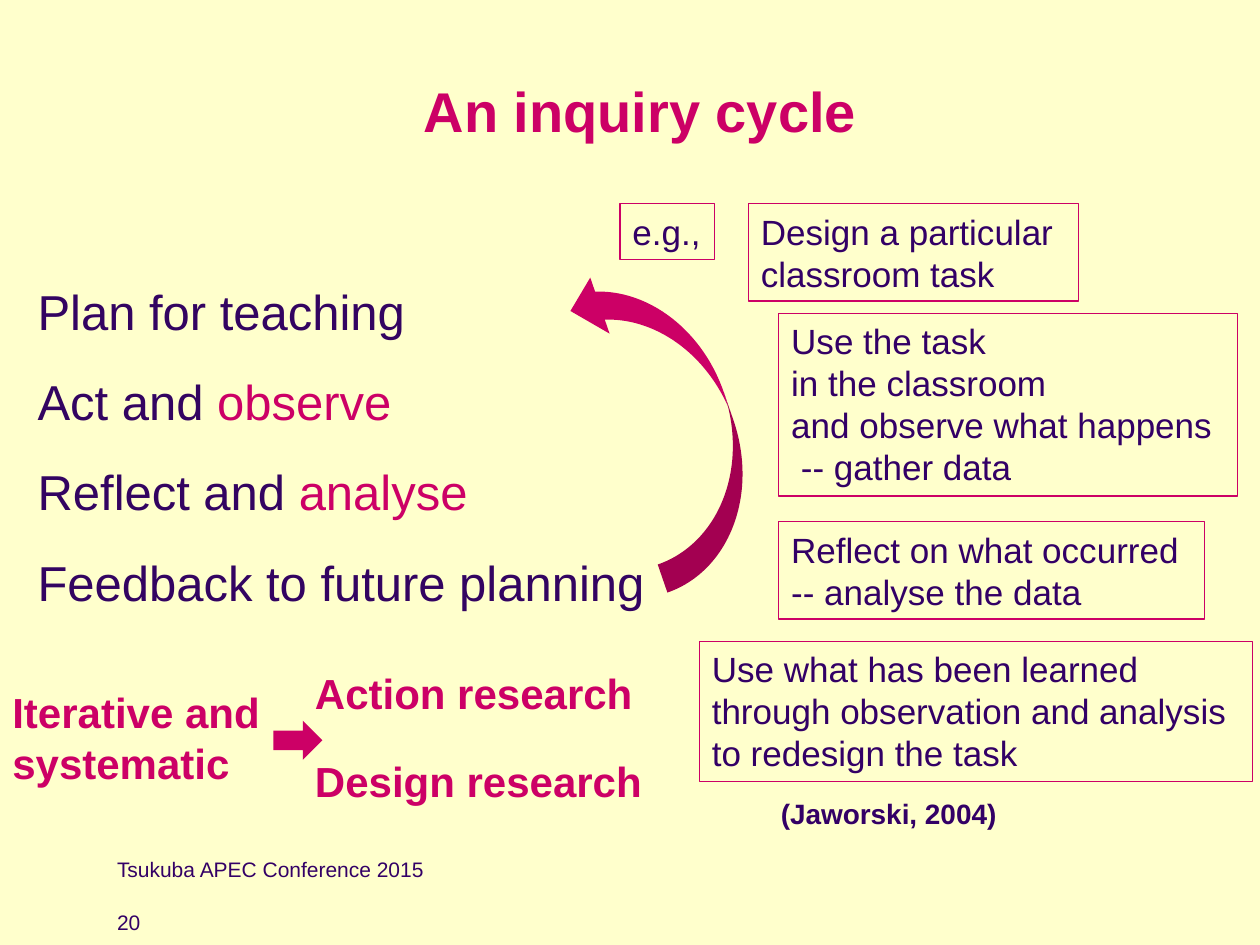
"""Build the slide 'An inquiry cycle'."""
from pptx import Presentation
from pptx.dml.color import RGBColor
from pptx.enum.shapes import MSO_SHAPE
from pptx.enum.text import MSO_ANCHOR, MSO_AUTO_SIZE, PP_ALIGN
from pptx.util import Cm, Pt

TOP, MIDDLE = MSO_ANCHOR.TOP, MSO_ANCHOR.MIDDLE
LEFT, CENTER = PP_ALIGN.LEFT, PP_ALIGN.CENTER
GROW, FIXED = MSO_AUTO_SIZE.SHAPE_TO_FIT_TEXT, MSO_AUTO_SIZE.NONE
RECTANGLE = MSO_SHAPE.RECTANGLE

FONT = "Arial"
COLORS = {"paper": "FFFFCC", "accent": "CC0066", "step": "330461", "ink": "330066"}

TITLE = ("An inquiry cycle", (2.11, 0.84, 21.59, 2.74))
STEPS = [
    ("Plan for teaching", ""),
    ("Act and ", "observe"),
    ("Reflect and ", "analyse"),
    ("Feedback to future planning", ""),
]
STEPS_AREA = (0.51, 4.24, 13.41, 9.5)
EXAMPLES = [
    ("e.g.,", (12.5, 4.11, 1.9, 1.12)),
    ("Design a particular\nclassroom task", (15.09, 4.11, 6.65, 1.96)),
    ("Use the task \vin the classroom\vand observe what happens \v -- gather data",
     (15.7, 6.32, 9.25, 3.68)),
    ("Reflect on what occurred \v-- analyse the data", (15.7, 10.52, 8.59, 1.96)),
    ("Use what has been learned \vthrough observation and analysis \vto redesign the task",
     (14.1, 12.93, 11.15, 2.82)),
]
APPROACHES = [
    ("Action research", (6.1, 13.34, 6.99, 1.27)),
    ("Design research", (6.1, 15.11, 7.16, 1.27)),
    ("Iterative and\nsystematic", (0, 13.72, 5.79, 2.31)),
]
CITATION = ("(Jaworski, 2004)", (15.49, 15.93, 4.93, 0.94))
FOOTERS = [
    ("Tsukuba APEC Conference 2015", (2.11, 17.15, 15.88, 1.07)),
    ("20", (2.11, 18.21, 1.7, 0.53)),
]
ARROWS = [
    (MSO_SHAPE.CURVED_UP_ARROW, (10.21, 7.24, 6.6, 2.39), 251),
    (MSO_SHAPE.RIGHT_ARROW, (5.51, 14.53, 0.99, 0.79), 0),
]


def rgb(name):
    return RGBColor.from_string(COLORS[name])


def lengths(area):
    return [Cm(value) for value in area]


def style(paragraph, size, color, bold=False):
    font = paragraph.font
    font.name, font.size, font.bold = FONT, Pt(size), bold
    font.color.rgb = rgb(color)


def write(holder, text, size, color, bold=False, align=LEFT, anchor=TOP, grow=False):
    frame = holder.text_frame
    frame.text = text
    frame.word_wrap = not grow
    frame.auto_size = GROW if grow else FIXED
    frame.vertical_anchor = anchor
    for paragraph in frame.paragraphs:
        paragraph.alignment = align
        style(paragraph, size, color, bold)


def add_label(slide, text, area, *look, **options):
    write(slide.shapes.add_textbox(*lengths(area)), text, *look, **options)


def add_example(slide, text, area):
    box = slide.shapes.add_shape(RECTANGLE, *lengths(area))
    box.shadow.inherit = False
    box.fill.background()
    box.line.color.rgb = rgb("accent")
    box.line.width = Pt(0.75)
    write(box, text, 20, "ink", grow=True)


def add_arrow(slide, kind, area, rotation):
    arrow = slide.shapes.add_shape(kind, *lengths(area))
    arrow.rotation = rotation
    arrow.shadow.inherit = False
    arrow.fill.solid()
    arrow.fill.fore_color.rgb = rgb("accent")
    arrow.line.fill.background()


def add_steps(slide):
    frame = slide.shapes.add_textbox(*lengths(STEPS_AREA)).text_frame
    frame.word_wrap = True
    frame.vertical_anchor = MIDDLE
    for index, (action, focus) in enumerate(STEPS):
        paragraph = frame.add_paragraph() if index else frame.paragraphs[0]
        paragraph.space_before = Pt(18 if index else 0)
        style(paragraph, 28, "step")
        paragraph.add_run().text = action
        if focus:
            highlight = paragraph.add_run()
            highlight.text = focus
            highlight.font.color.rgb = rgb("accent")


def main():
    deck = Presentation()
    deck.slide_width, deck.slide_height = Cm(25.4), Cm(19.05)
    slide = deck.slides.add_slide(deck.slide_layouts[6])
    slide.background.fill.solid()
    slide.background.fill.fore_color.rgb = rgb("paper")

    add_label(slide, *TITLE, 32, "accent", bold=True, align=CENTER, anchor=MIDDLE)
    add_steps(slide)
    for text, area in FOOTERS:
        add_label(slide, text, area, 12, "ink")
    for text, area in EXAMPLES:
        add_example(slide, text, area)
    for text, area in APPROACHES:
        add_label(slide, text, area, 24, "accent", bold=True, grow=True)
    for kind, area, rotation in ARROWS:
        add_arrow(slide, kind, area, rotation)
    add_label(slide, *CITATION, 16, "ink", bold=True, grow=True)
    deck.save("out.pptx")


if __name__ == "__main__":
    main()
